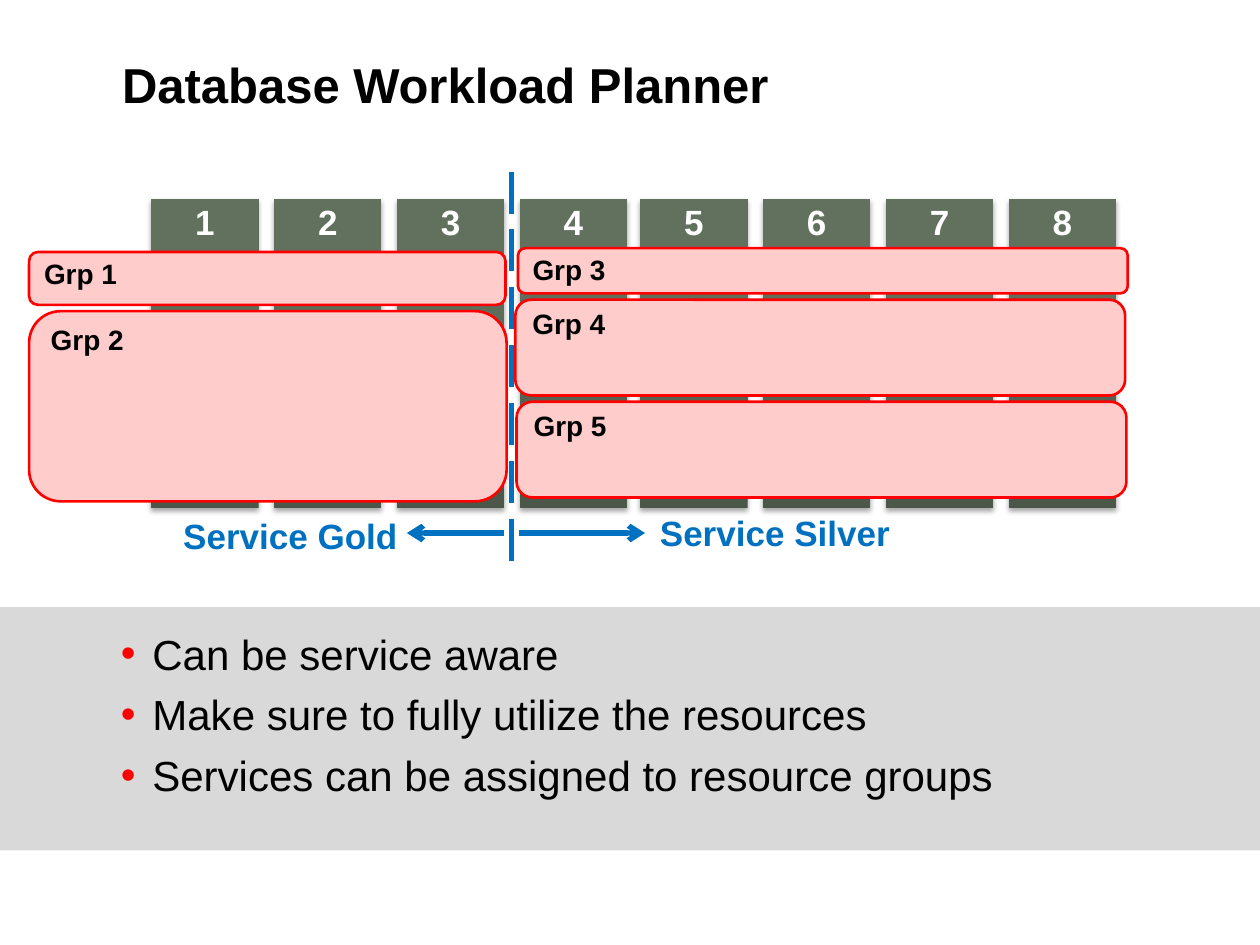
from collections import namedtuple

from lxml import etree
from pptx import Presentation
from pptx.dml import color
from pptx.enum import dml, shapes, text
from pptx.oxml import ns, parse_xml
from pptx.util import Pt

Box = namedtuple("Box", "left top width height")
BLUE, RED, PINK, BLACK, WHITE = "0070C0", "FF0000", "FFCCCC", "000000", "FFFFFF"
LEFT, CENTER = text.PP_ALIGN.LEFT, text.PP_ALIGN.CENTER


def rgb(value):
    """Return the colour for a hex string."""
    return color.RGBColor.from_string(value)


def points(box):
    """Return the box as four lengths in points."""
    return [Pt(value) for value in box]


def write(para, words, size, shade, bold=True, align=LEFT, line=0.9):
    """Add one formatted run to a paragraph."""
    para.alignment, para.line_spacing = align, line
    span = para.add_run()
    span.text = words
    span.font.name, span.font.size, span.font.bold = "Arial", Pt(size), bold
    span.font.color.rgb = rgb(shade)


def add_frame(page, box, wrap=True, margin=0):
    """Add a top-anchored text box and return its text frame."""
    frame = page.shapes.add_textbox(*points(box)).text_frame
    frame.word_wrap = wrap
    frame.margin_left = frame.margin_right = Pt(margin)
    frame.margin_top = frame.margin_bottom = Pt(margin / 2)
    return frame


def add_block(page, kind, box):
    """Add a plain shape with top-anchored text and no outline."""
    block = page.shapes.add_shape(kind, *points(box))
    block.shadow.inherit = False
    block.line.fill.background()
    block.text_frame.word_wrap = True
    block.text_frame.vertical_anchor = text.MSO_ANCHOR.TOP
    return block


def add_line(page, start, end, arrow=False):
    """Add a blue line, dashed unless it carries an arrowhead."""
    line = page.shapes.add_connector(shapes.MSO_CONNECTOR.STRAIGHT, *points(start + end))
    line.line.color.rgb, line.line.width = rgb(BLUE), Pt(3)
    if arrow:
        etree.SubElement(line.line._get_or_add_ln(), ns.qn("a:tailEnd"), type="arrow")
    else:
        line.line.dash_style = dml.MSO_LINE.LONG_DASH
    etree.SubElement(line._element.spPr, ns.qn("a:effectLst"))


def add_title(page, box):
    """Write the slide title."""
    write(add_frame(page, box).paragraphs[0], "Database Workload Planner", 28, BLACK, line=1)


def add_column(page, box, number):
    """Draw one numbered server column with gradient and shadow."""
    column = add_block(page, shapes.MSO_SHAPE.RECTANGLE, box)
    column.fill.gradient()
    column.fill.gradient_angle = 90
    for stop, position, shade in zip(column.fill.gradient_stops, (0, 0.8), ("4B5748", "62715E")):
        stop.position, stop.color.rgb = position, rgb(shade)
    effects = column._element.spPr.find(ns.qn("a:effectLst"))
    effects.append(parse_xml(
        f'<a:outerShdw {ns.nsdecls("a")} blurRad="{Pt(3.1)}" dist="{Pt(1.8)}" dir="5400000" '
        'rotWithShape="0"><a:srgbClr val="000000"><a:alpha val="35000"/></a:srgbClr></a:outerShdw>'))
    write(column.text_frame.paragraphs[0], str(number), 20, WHITE, align=CENTER)


def add_servers(page, box):
    """Draw two banks of four numbered columns."""
    for bank, offset in enumerate((0, 279.4)):
        for place in range(4):
            left = box.left + offset + place * 70.2
            add_column(page, Box(left, box.top, 61.4, box.height), bank * 4 + place + 1)


def add_services(page, box):
    """Draw the dashed divider, its two arrows and the service names."""
    middle = box.left + box.width / 2
    level = box.top + 212.4
    add_line(page, (middle, box.top + box.height), (middle, box.top))
    for start, end in ((-4.3, -59.8), (4.3, 76.3)):
        add_line(page, (middle + start, level), (middle + end, level), arrow=True)
    for words, left, top, width in (("Service Gold", 0, 200.9, 137.5),
                                    ("Service Silver", 272.2, 199.4, 146.9)):
        label = Box(box.left + left, box.top + top, width, 28.8)
        frame = add_frame(page, label, wrap=False, margin=7.2)
        write(frame.paragraphs[0], words, 20, BLUE, align=CENTER)


def add_groups(page, box):
    """Draw the resource groups laid across the columns."""
    for words, left, top, width, height in (
        ("Grp 1", 0, 2.2, 272.2, 30.2),
        ("Grp 2", 0, 36, 272.9, 108.7),
        ("Grp 5", 278.6, 87.8, 348.5, 54.7),
        ("Grp 4", 277.9, 29.5, 348.5, 54.7),
        ("Grp 3", 279.4, 0, 348.5, 25.9),
    ):
        group = add_block(page, shapes.MSO_SHAPE.ROUNDED_RECTANGLE,
                          Box(box.left + left, box.top + top, width, height))
        group.fill.solid()
        group.fill.fore_color.rgb = rgb(PINK)
        group.line.color.rgb, group.line.width = rgb(RED), Pt(1.5)
        write(group.text_frame.paragraphs[0], words, 16, BLACK)


def add_summary(page, box):
    """Draw the grey band with its bulleted points."""
    band = add_block(page, shapes.MSO_SHAPE.RECTANGLE, box)
    band.fill.solid()
    band.fill.fore_color.rgb = rgb("D9D9D9")
    frame = add_frame(page, Box(box.left + 69.1, box.top + 12, 593.3, 108.7))
    for index, words in enumerate(("Can be service aware",
                                   "Make sure to fully utilize the resources",
                                   "Services can be assigned to resource groups")):
        para = frame.add_paragraph() if index else frame.paragraphs[0]
        write(para, words, 24, BLACK, bold=False, line=1)
        para.space_before = Pt(5.8 if index else 0)
        layout = para._p.get_or_add_pPr()
        layout.set("marL", str(Pt(18)))
        layout.set("indent", str(Pt(-18)))
        tint = etree.SubElement(layout, ns.qn("a:buClr"))
        etree.SubElement(tint, ns.qn("a:srgbClr"), val=RED)
        etree.SubElement(layout, ns.qn("a:buFont"), typeface="Arial")
        etree.SubElement(layout, ns.qn("a:buChar"), char="•")


def main():
    """Build and save the slide."""
    deck = Presentation()
    deck.slide_width, deck.slide_height = Pt(720), Pt(540)
    page = deck.slides.add_slide(deck.slide_layouts[6])
    add_summary(page, Box(0, 347, 720, 139))
    add_title(page, Box(69.8, 31, 596.9, 67.7))
    add_servers(page, Box(86.4, 113.8, 552, 176.4))
    add_services(page, Box(97.2, 92.2, 390.2, 228.2))
    add_groups(page, Box(16.6, 141.8, 628, 145))
    deck.save("out.pptx")


if __name__ == "__main__":
    main()
